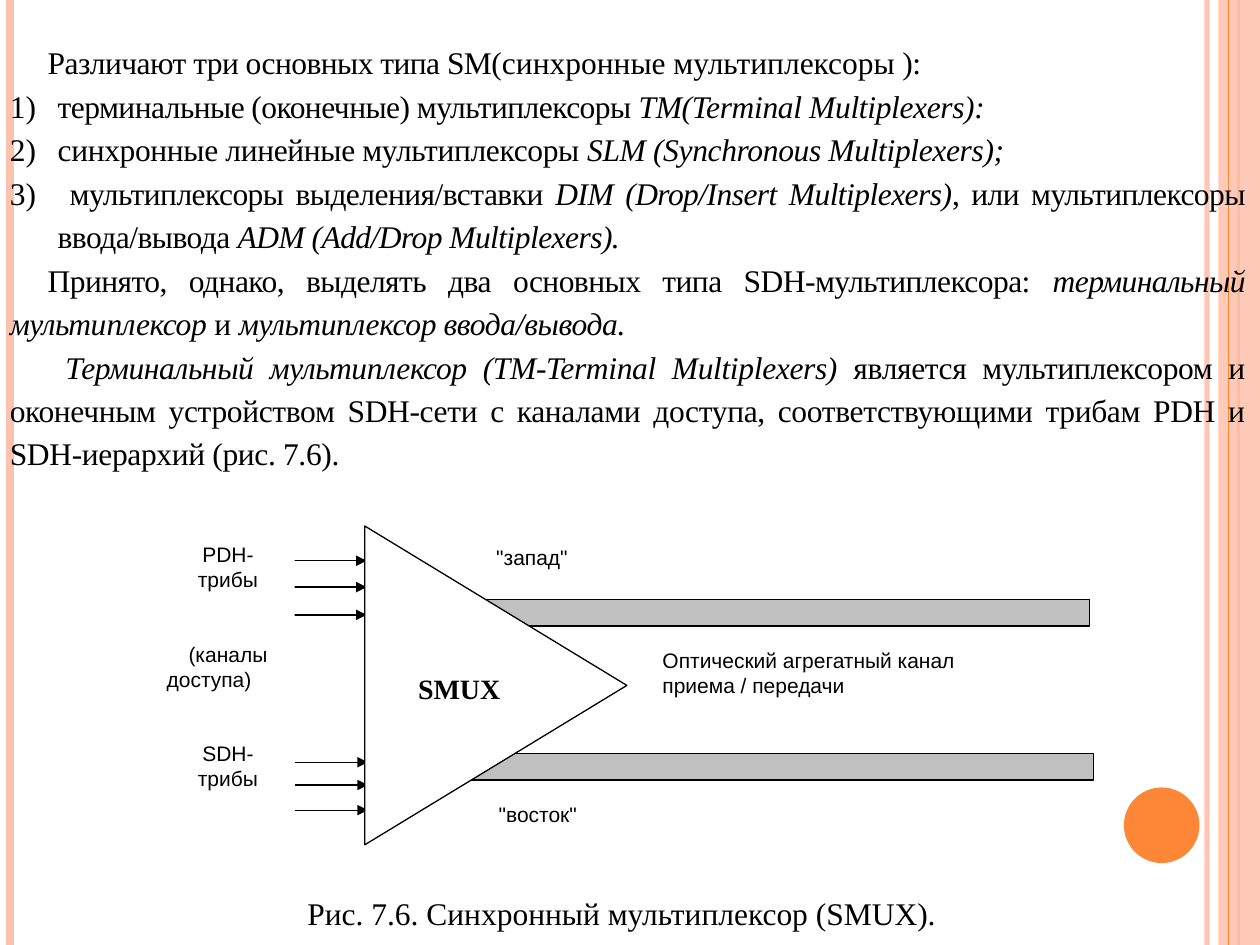
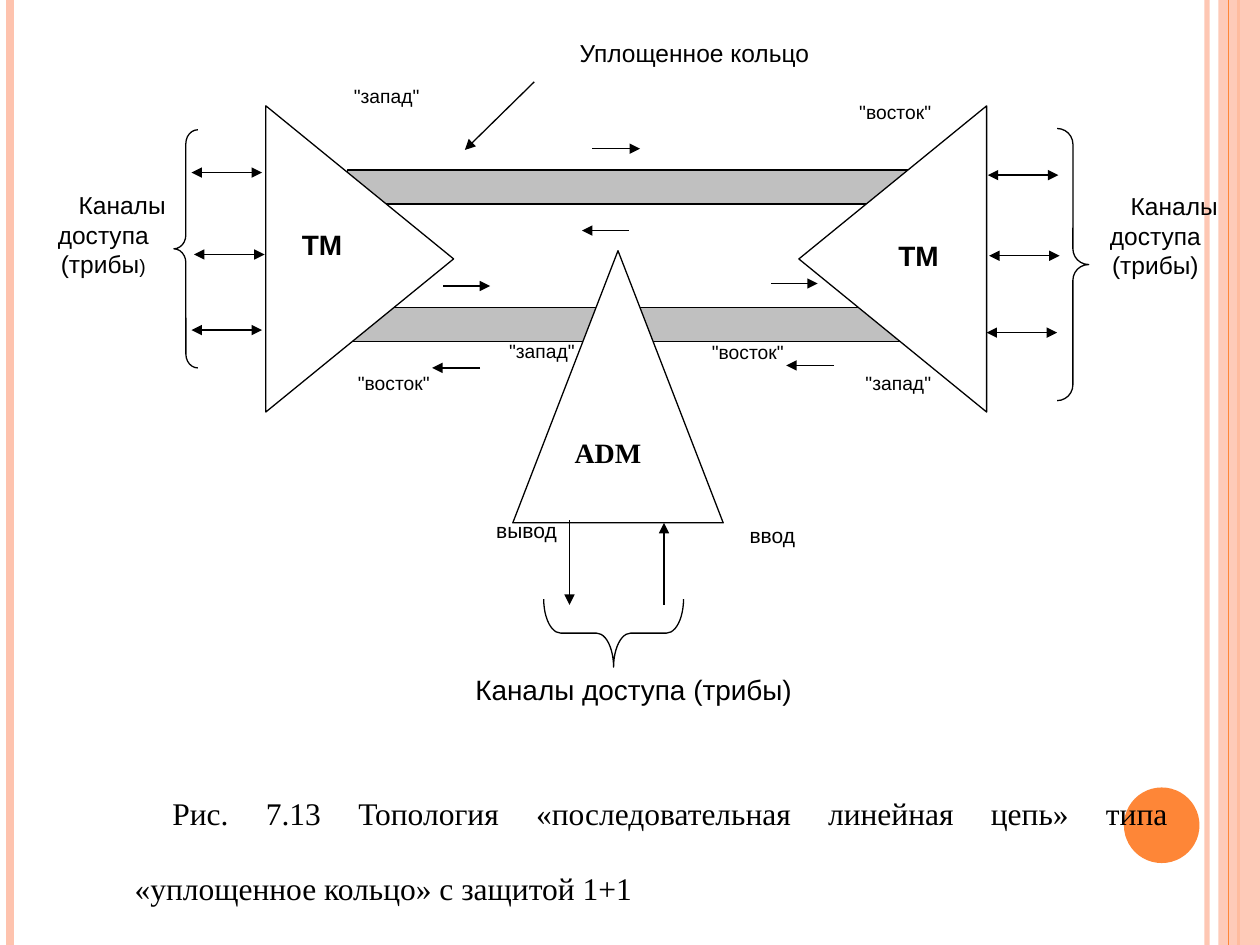
from dataclasses import dataclass
from typing import NamedTuple

from lxml.etree import SubElement
from pptx import Presentation
from pptx.dml.color import RGBColor
from pptx.enum.shapes import MSO_CONNECTOR, MSO_SHAPE
from pptx.enum.text import MSO_ANCHOR, PP_ALIGN
from pptx.oxml.ns import qn
from pptx.shapes.autoshape import Shape
from pptx.slide import Slide
from pptx.text.text import _Paragraph
from pptx.util import Inches, Pt

BLACK = RGBColor(0x00, 0x00, 0x00)
WHITE = RGBColor(0xFF, 0xFF, 0xFF)
GREY = RGBColor(0xC0, 0xC0, 0xC0)
ORANGE = RGBColor(0xFE, 0x86, 0x37)
PEACH = RGBColor(0xFE, 0xC3, 0xAE)
SANS = "Arial"
SERIF = "Times New Roman"
WIDTH, HEIGHT = 10, 7.5
FIRST_LINE = 0.3
LEFT, CENTER, JUSTIFY = PP_ALIGN.LEFT, PP_ALIGN.CENTER, PP_ALIGN.JUSTIFY


class Box(NamedTuple):
    left: float
    top: float
    width: float
    height: float


class Line(NamedTuple):
    x1: float
    y1: float
    x2: float
    y2: float
    color: RGBColor = BLACK
    weight: float = 0.75
    head: bool = False
    tail: bool = False
    opacity: int = 100


class Figure(NamedTuple):
    kind: MSO_SHAPE
    box: Box
    fill: RGBColor | None = None
    outline: RGBColor | None = BLACK
    rotation: int = 0
    bend: float | None = None
    opacity: int = 100


@dataclass
class Label:
    text: str
    box: Box
    size: int = 12
    align: PP_ALIGN = CENTER
    font: str = SANS
    bold: bool = False
    filled: bool = False
    margin_x: float = 0.1
    margin_y: float = 0.05
    left_indent: float = 0
    spacing: float = 1


class Span(NamedTuple):
    text: str
    italic: bool = False
    tracking: float = -0.3


class Passage(NamedTuple):
    spans: list[Span]
    numbered: bool = False
    first_line: float = FIRST_LINE


def set_opacity(drawn, percent: int) -> None:
    if percent < 100:
        for color in drawn._element.spPr.iter(qn("a:srgbClr")):
            SubElement(color, qn("a:alpha")).set("val", str(percent * 1000))


def draw_line(slide: Slide, line: Line) -> None:
    ends = [Inches(value) for value in line[:4]]
    connector = slide.shapes.add_connector(MSO_CONNECTOR.STRAIGHT, *ends)
    connector.line.color.rgb = line.color
    connector.line.width = Pt(line.weight)
    set_opacity(connector, line.opacity)
    outline = connector.line._get_or_add_ln()
    for tag, wanted in (("a:headEnd", line.head), ("a:tailEnd", line.tail)):
        if wanted:
            SubElement(outline, qn(tag)).set("type", "triangle")
    SubElement(connector._element.spPr, qn("a:effectLst"))


def draw_figure(slide: Slide, figure: Figure) -> None:
    shape = slide.shapes.add_shape(figure.kind, *map(Inches, figure.box))
    shape.shadow.inherit = False
    shape.rotation = figure.rotation
    if figure.bend is not None:
        shape.adjustments[0] = figure.bend
    if figure.fill is None:
        shape.fill.background()
    else:
        shape.fill.solid()
        shape.fill.fore_color.rgb = figure.fill
    if figure.outline is None:
        shape.line.fill.background()
    else:
        shape.line.color.rgb = figure.outline
        shape.line.width = Pt(0.75)
    set_opacity(shape, figure.opacity)


def set_indent(paragraph: _Paragraph, left: float, first: float) -> None:
    properties = paragraph._p.get_or_add_pPr()
    properties.set("marL", str(Inches(left)))
    properties.set("indent", str(Inches(first)))


def draw_label(slide: Slide, label: Label) -> Shape:
    caption = slide.shapes.add_textbox(*map(Inches, label.box))
    if label.filled:
        caption.fill.solid()
        caption.fill.fore_color.rgb = WHITE
    frame = caption.text_frame
    frame.word_wrap = True
    frame.vertical_anchor = MSO_ANCHOR.TOP
    frame.margin_left = frame.margin_right = Inches(label.margin_x)
    frame.margin_top = frame.margin_bottom = Inches(label.margin_y)
    frame.text = label.text
    for paragraph in frame.paragraphs:
        set_indent(paragraph, label.left_indent, FIRST_LINE)
        paragraph.alignment = label.align
        paragraph.line_spacing = label.spacing
        for run in paragraph.runs:
            run.font.name = label.font
            run.font.size = Pt(label.size)
            run.font.bold = label.bold
            run.font.color.rgb = BLACK
    return caption


def draw_passages(slide: Slide, box: Box, passages: list[Passage]) -> None:
    frame = slide.shapes.add_textbox(*map(Inches, box)).text_frame
    frame.word_wrap = True
    for index, passage in enumerate(passages):
        paragraph = frame.add_paragraph() if index else frame.paragraphs[0]
        paragraph.alignment = JUSTIFY
        paragraph.line_spacing = 1.15
        if passage.numbered:
            set_indent(paragraph, 0.38, -0.38)
            number = SubElement(paragraph._p.get_or_add_pPr(), qn("a:buAutoNum"))
            number.set("type", "arabicParenR")
        else:
            set_indent(paragraph, 0, passage.first_line)
        for span in passage.spans:
            run = paragraph.add_run()
            run.text = span.text
            run.font.name = SERIF
            run.font.size = Pt(18)
            run.font.italic = span.italic
            run.font.color.rgb = BLACK
            run._r.get_or_add_rPr().set("spc", str(round(span.tracking * 100)))


def full_height(x: float, color: RGBColor, weight: float, opacity: int = 100) -> Line:
    return Line(x, 0, x, HEIGHT, color, weight, opacity=opacity)


def draw_frame(slide: Slide) -> None:
    draw_line(slide, full_height(9.58, PEACH, 3, 93))
    draw_line(slide, full_height(0.08, PEACH, 4.5))
    draw_line(slide, full_height(9.83, ORANGE, 1.5))
    band = Box(9.67, 0, 0.33, HEIGHT)
    draw_figure(slide, Figure(MSO_SHAPE.RECTANGLE, band, PEACH, None, opacity=87))
    draw_line(slide, full_height(9.75, ORANGE, 0.75))
    draw_figure(slide, Figure(MSO_SHAPE.OVAL, Box(8.92, 6.25, 0.6, 0.6), ORANGE, None))


def channel(left: float, top: float, width: float, height: float) -> Figure:
    return Figure(MSO_SHAPE.RECTANGLE, Box(left, top, width, height), GREY)


def multiplexer(box: Box, rotation: int = 0) -> Figure:
    return Figure(MSO_SHAPE.ISOSCELES_TRIANGLE, box, WHITE, rotation=rotation)


MULTIPLEXER_TYPES = [
    Passage([Span("Различают три основных типа SM("),
             Span("синхронные мультиплексоры", tracking=0), Span(" ):")]),
    Passage([Span("терминальные (оконечные) мультиплексоры "),
             Span("ТМ(Terminal Multiplexers):", True, -0.2)], True),
    Passage([Span("синхронные линейные мультиплексоры ", tracking=-0.2),
             Span("SLM (Synchronous Multiplexers);", True, -0.2)], True),
    Passage([Span(" мультиплексоры выделения/вставки "),
             Span("DIM (Drop/Insert Multiplexers)", True),
             Span(", или мультиплексоры ввода/вывода "),
             Span("ADM (Add/Drop Multiplexers).", True)], True),
    Passage([Span("Принято, однако, выделять два основных типа SDH-мультиплексора: "),
             Span("терминальный мульти", True), Span("плексор ", True, -0.2),
             Span("и ", tracking=-0.2),
             Span("мультиплексор ввода/вывода.", True, -0.2)]),
    Passage([Span("Терминальный мультиплексор (ТМ-Terminal Multiplexers)", True, -0.2),
             Span(" является мультиплексором и оконечным устройством SDH-сети с каналами "
                  "доступа, соответствующими трибам PDH и SDH-иерархий (рис. 7.6).",
                  tracking=-0.2)], first_line=0.44),
]


def build_smux(slide: Slide) -> None:
    draw_frame(slide)
    draw_passages(slide, Box(-0.02, 0.25, WIDTH, 3.58), MULTIPLEXER_TYPES)
    draw_label(slide, Label("Рис. 7.6. Синхронный мультиплексор (SMUX).",
                            Box(1.54, 7, 7.62, 0.45), 18, JUSTIFY, SERIF,
                            left_indent=0.5, spacing=1.15))
    for start, rows in ((2.33, (4.45, 4.66, 4.88)), (2.34, (6.05, 6.23, 6.43))):
        for y in rows:
            draw_line(slide, Line(start, y, start + 0.58, y, tail=True))
    tributaries = draw_label(slide, Label(
        "PDH-\nтрибы\n(каналы доступа)\nSDH-\nтрибы",
        Box(0.98, 4.25, 1.36, 2.49), filled=True))
    for group_start in (2, 3):
        tributaries.text_frame.paragraphs[group_start].space_before = Pt(28)
    draw_figure(slide, channel(3.61, 4.76, 5.04, 0.21))
    draw_figure(slide, channel(3.64, 5.98, 5.04, 0.21))
    draw_label(slide, Label("Оптический агрегатный канал\nприема / передачи",
                            Box(4.86, 5.09, 4.07, 0.82), align=LEFT, filled=True))
    draw_figure(slide, multiplexer(Box(2.67, 4.4, 2.53, 2.08), 90))
    for label in (
        Label("SMUX", Box(2.92, 5.28, 1.16, 0.63), 16, JUSTIFY, SERIF, True),
        Label('"запад"', Box(3.54, 4.27, 1.9, 0.62), align=JUSTIFY),
        Label('"восток"', Box(3.56, 6.31, 2.08, 0.43), align=JUSTIFY),
    ):
        draw_label(slide, label)


def build_flat_ring(slide: Slide) -> None:
    draw_frame(slide)
    draw_figure(slide, channel(2.76, 1.35, 4.46, 0.27))
    for start, y in ((1.52, 1.37), (1.54, 2.02), (1.52, 2.62),
                     (7.84, 1.39), (7.85, 2.03), (7.83, 2.64)):
        draw_line(slide, Line(start, y, start + 0.56, y, head=True, tail=True))
    for figure in (
        Figure(MSO_SHAPE.LEFT_BRACE, Box(1.38, 1.03, 0.19, 1.89), bend=0.58),
        Figure(MSO_SHAPE.RIGHT_BRACE, Box(8.39, 1.02, 0.25, 2.16), bend=0.5),
        Figure(MSO_SHAPE.LEFT_BRACE, Box(4.6, 4.47, 0.54, 1.11), rotation=270, bend=0.25),
        channel(2.75, 2.44, 4.46, 0.27),
        multiplexer(Box(1.64, 1.31, 2.43, 1.49), 90),
        multiplexer(Box(5.87, 1.31, 2.43, 1.49), 270),
        multiplexer(Box(4.07, 1.99, 1.67, 2.16)),
    ):
        draw_figure(slide, figure)
    left_access = draw_label(slide, Label("Каналы доступа (трибы", Box(0.18, 1.46, 1.28, 1.62), 14))
    closing = left_access.text_frame.paragraphs[0].add_run()
    closing.text = ")"
    closing.font.name = SANS
    closing.font.size = Pt(11)
    closing.font.color.rgb = BLACK
    for x1, y1, x2, y2 in (
        (4.52, 4.13, 4.52, 4.8), (5.27, 4.8, 5.27, 4.15),
        (3.52, 2.27, 3.89, 2.27), (3.81, 2.92, 3.43, 2.92),
        (6.12, 2.25, 6.49, 2.25), (6.62, 2.9, 6.24, 2.9),
        (4.7, 1.18, 5.08, 1.18), (4.99, 1.83, 4.62, 1.83),
        (4.24, 0.65, 3.69, 1.19),
    ):
        draw_line(slide, Line(x1, y1, x2, y2, tail=True))
    for label in (
        Label("Каналы доступа (трибы)", Box(8.52, 1.47, 1.3, 1.62), 14),
        Label("ТМ", Box(1.94, 1.76, 0.93, 0.81), 16, bold=True),
        Label("ТМ", Box(6.7, 1.84, 0.88, 0.49), 16, bold=True),
        Label("ADМ", Box(4.07, 3.41, 1.21, 0.49), 16, font=SERIF, bold=True),
        Label("Каналы доступа (трибы)", Box(3.3, 5.34, 3.16, 0.46), 16, margin_y=0),
        Label("вывод", Box(3.54, 4.06, 1.3, 0.85), align=LEFT),
        Label("ввод", Box(5.33, 4.1, 1.3, 0.59)),
        Label('"запад"', Box(2.41, 0.66, 1.11, 0.54), 11, JUSTIFY, margin_y=0.01),
        Label('"запад"', Box(6.47, 2.9, 1.11, 0.54), 11, JUSTIFY),
        Label('"запад"', Box(3.68, 2.68, 1.11, 0.54), 11, JUSTIFY,
              margin_x=0.06, margin_y=0.01),
        Label("Уплощенное кольцо", Box(4.28, 0.25, 2.27, 0.81), 14, JUSTIFY,
              filled=True, margin_x=0.02),
        Label("Рис. 7.13 Топология «последовательная линейная цепь» типа "
              "«уплощенное кольцо» с защитой 1+1", Box(0.47, 5.95, 8.9, 1.31),
              18, JUSTIFY, SERIF, left_indent=0.5, spacing=2),
    ):
        draw_label(slide, label)
    for left, top in ((6.37, 0.75), (2.39, 2.9), (5.2, 2.65)):
        draw_label(slide, Label('"восток"', Box(left, top, 1.17, 0.63), 11))


def main() -> None:
    deck = Presentation()
    deck.slide_width, deck.slide_height = Inches(WIDTH), Inches(HEIGHT)
    for build in (build_smux, build_flat_ring):
        build(deck.slides.add_slide(deck.slide_layouts[6]))
    deck.save("out.pptx")


if __name__ == "__main__":
    main()
